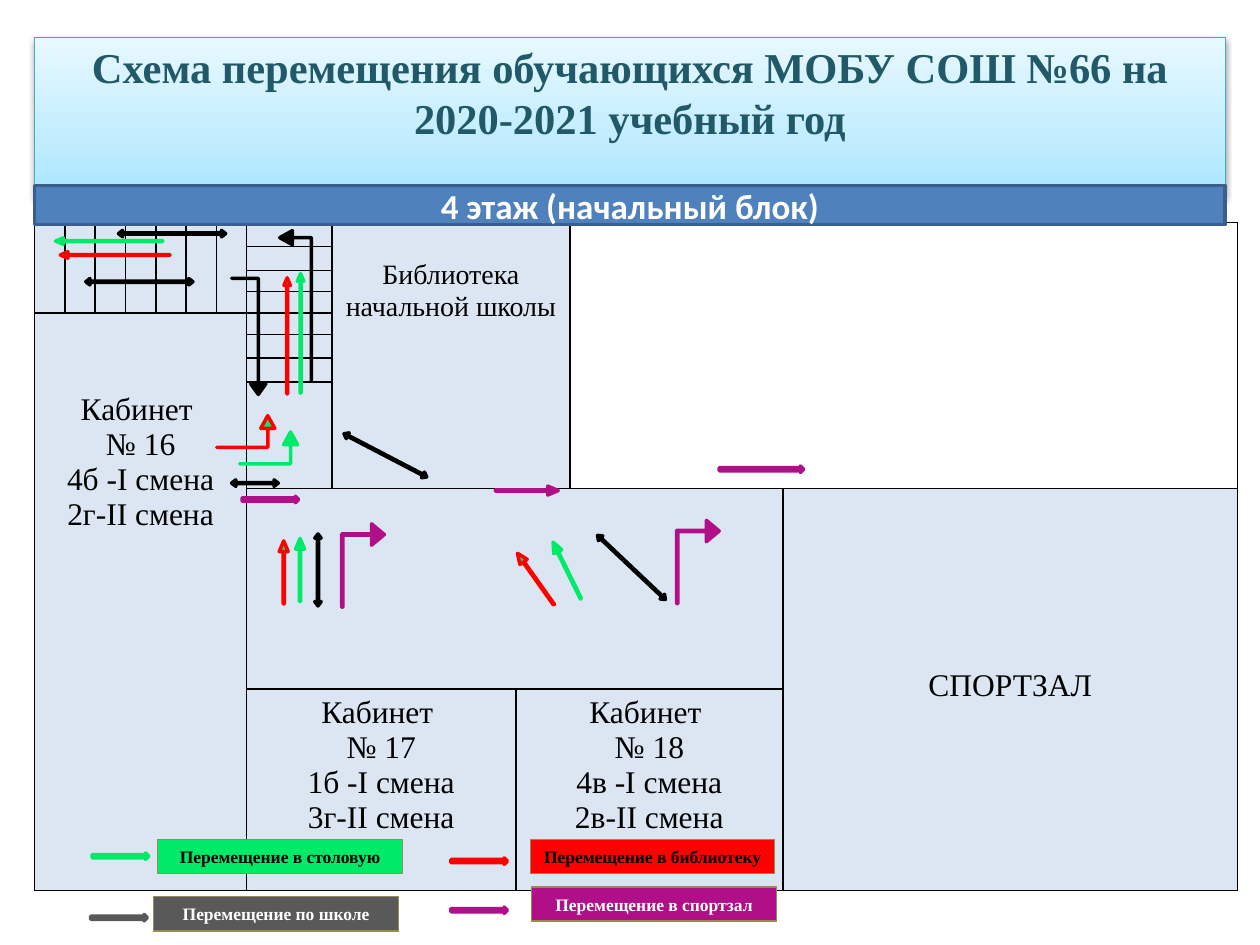
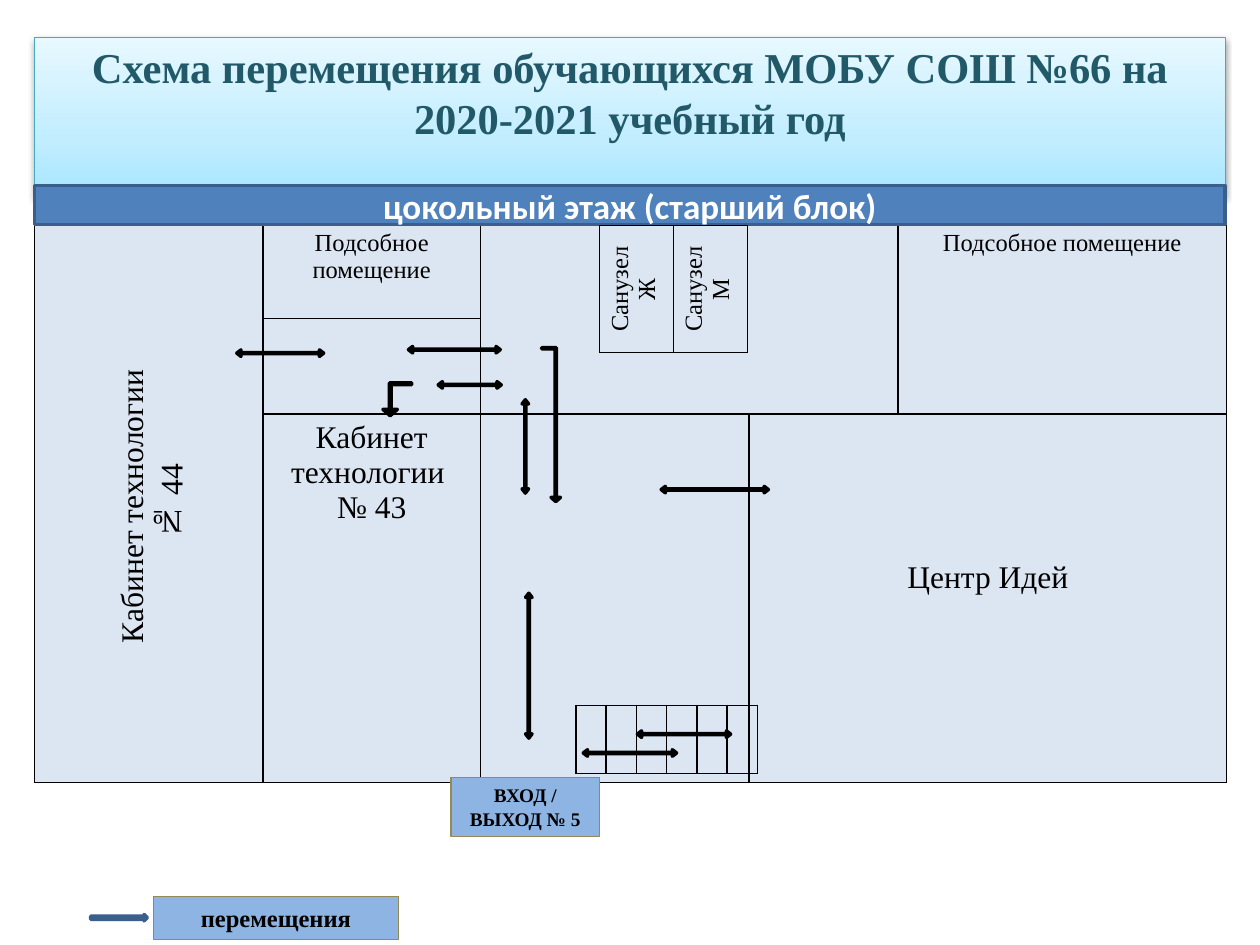
from copy import deepcopy
from dataclasses import dataclass

from lxml.etree import SubElement
from pptx import Presentation
from pptx.dml.color import RGBColor
from pptx.enum.shapes import MSO_SHAPE as Preset
from pptx.enum.text import MSO_ANCHOR as Anchor, PP_ALIGN as Align
from pptx.oxml import parse_xml
from pptx.oxml.ns import nsdecls, qn
from pptx.util import Cm, Pt

SCHOOL, CANTEEN, LIBRARY, GYM = "000000", "00EA6A", "FF0000", "B10F87"
BLACK, WHITE, GREY = "000000", "FFFFFF", "595959"
ROOM, BAND, BAND_EDGE = "DCE6F2", "4F81BD", "3A5F8C"
LABEL, LABEL_EDGE = "8EB4E3", "948A54"
TITLE_TEXT, TITLE_EDGE = "215968", "46AAC5"
TITLE_STOPS = [(0, "A7E6FF"), (0.35, "C1EDFF"), (1, "E7F8FF")]
SERIF, SANS = "Times New Roman", "Calibri"
TITLE = "Схема перемещения обучающихся МОБУ СОШ №66 на 2020-2021 учебный год"

LEFT, WIDTH, PLAN_TOP = 0.7, 24.0, 4.49
STEP = 0.61
BOTH_WAYS = (0.18, 0.65)
ONE_WAY = (0.14, 1.18)
PLAIN_HEAD = (0.5, 0.5)
THIN_BEND = (0, 0.22, 0.4)
STAIR_BEND = (0, 0.22, 0.31)
GYM_BEND = (0.03, 0.25, 0.3)
BASEMENT_BEND = (0.06, 0.25, 0.22)


@dataclass
class Room:
    """A block of table cells, with its caption lines."""
    row: int
    col: int
    rows: int = 1
    cols: int = 1
    lines: tuple = ()
    size: float = 18
    top: float = 0.13
    upright: bool = False
    fill: str = ROOM


def rgb(value):
    return RGBColor.from_string(value)


def apply(target, values):
    for name, value in values.items():
        setattr(target, name, value)


def write(frame, lines, size, color, bold=False, font=SERIF):
    for index, line in enumerate(lines):
        paragraph = frame.paragraphs[0] if index == 0 else frame.add_paragraph()
        paragraph.alignment = Align.CENTER
        run = paragraph.add_run()
        run.text = line
        apply(run.font, {"name": font, "size": Pt(size), "bold": bold})
        run.font.color.rgb = rgb(color)


def add_preset(slide, preset, box, fill, edge, edge_width):
    shape = slide.shapes.add_shape(preset, *map(Cm, box))
    shape.shadow.inherit = False
    shape.fill.solid()
    shape.fill.fore_color.rgb = rgb(fill)
    shape.line.color.rgb = rgb(edge)
    shape.line.width = Pt(edge_width)
    return shape


def add_label(slide, box, text, size, fill, color=BLACK, edge=LABEL_EDGE,
              edge_width=0.75, font=SERIF, anchor=Anchor.MIDDLE):
    label = add_preset(slide, Preset.RECTANGLE, box, fill, edge, edge_width)
    apply(label.text_frame, {
        "word_wrap": True, "vertical_anchor": anchor,
        "margin_top": Cm(0.07), "margin_bottom": Cm(0.07)})
    write(label.text_frame, [text], size, color, True, font)
    return label


def add_title(slide):
    title = add_label(slide, (LEFT, 0.76, WIDTH, 3.18), TITLE, 24.3, WHITE,
                      TITLE_TEXT, TITLE_EDGE, anchor=Anchor.TOP)
    title.fill.gradient()
    title.fill.gradient_angle = 90
    stops = title._element.spPr.find(".//" + qn("a:gsLst"))
    stops.append(deepcopy(stops[0]))
    for stop, (position, color) in zip(title.fill.gradient_stops, TITLE_STOPS):
        stop.position = position
        stop.color.rgb = rgb(color)
    effects = title._element.spPr.find(qn("a:effectLst"))
    shadow = SubElement(effects, qn("a:outerShdw"), blurRad="40000",
                        dist="20000", dir="5400000", rotWithShape="0")
    tint = SubElement(shadow, qn("a:srgbClr"), val=BLACK)
    SubElement(tint, qn("a:alpha"), val="38000")


def add_floor_band(slide, text):
    add_label(slide, (LEFT, 3.74, WIDTH, 0.79), text, 20, BAND, WHITE,
              BAND_EDGE, 2, SANS)


def format_cell(cell, fill):
    """Empty cell with a black outline that lets its row stay low."""
    apply(cell, {"margin_top": 0, "margin_bottom": 0,
                 "margin_left": 0, "margin_right": 0})
    if fill:
        cell.fill.solid()
        cell.fill.fore_color.rgb = rgb(fill)
    else:
        cell.fill.background()
    properties = cell._tc.get_or_add_tcPr()
    for index, side in enumerate("LRTB"):
        properties.insert(index, parse_xml(
            f'<a:ln{side} {nsdecls("a")} w="12700"><a:solidFill>'
            f'<a:srgbClr val="{BLACK}"/></a:solidFill></a:ln{side}>'))
    cell.text_frame.paragraphs[0]._p.get_or_add_endParaRPr().set("sz", "100")


def add_plan(slide, left, top, widths, heights, rooms=(), fill=None):
    table = slide.shapes.add_table(
        len(heights), len(widths), Cm(left), Cm(top),
        Cm(sum(widths)), Cm(sum(heights))).table
    apply(table, {"first_row": False, "horz_banding": False})
    for column, width in zip(table.columns, widths):
        column.width = Cm(width)
    for row, height in zip(table.rows, heights):
        row.height = Cm(height)
    for cell in table.iter_cells():
        format_cell(cell, fill)
    for room in rooms:
        add_room(table, room)


def add_room(table, room):
    cell = table.cell(room.row, room.col)
    if room.rows * room.cols > 1:
        cell.merge(table.cell(room.row + room.rows - 1,
                              room.col + room.cols - 1))
    if room.fill:
        cell.fill.solid()
        cell.fill.fore_color.rgb = rgb(room.fill)
    if room.lines:
        apply(cell, {"margin_top": Cm(room.top), "margin_bottom": Cm(0.13),
                     "margin_left": Cm(0.25), "margin_right": Cm(0.25)})
        write(cell.text_frame, room.lines, room.size, BLACK)
    if room.upright:
        cell._tc.get_or_add_tcPr().set("vert", "vert270")


def add_arrow(slide, preset, box, color, fill, turn, proportions):
    arrow = add_preset(slide, preset, box, fill or color, color, 2)
    arrow.rotation = turn
    for index, value in enumerate(proportions):
        arrow.adjustments[index] = value
    return arrow


def add_straight(slide, x, y, length, color=SCHOOL, turn=0, thickness=0.13,
                 preset=Preset.RIGHT_ARROW, proportions=ONE_WAY, fill=None):
    """Straight arrow centred on (x, y) and turned about that point."""
    box = (x - length / 2, y - thickness / 2, length, thickness)
    add_arrow(slide, preset, box, color, fill, turn, proportions)


def add_two_way(slide, x, y, length, turn=0):
    add_straight(slide, x, y, length, turn=turn,
                 preset=Preset.LEFT_RIGHT_ARROW, proportions=BOTH_WAYS)


def add_bend(slide, box, proportions, color=SCHOOL, turn=0, flip=False,
             fill=None):
    bend = add_arrow(slide, Preset.BENT_UP_ARROW, box, color, fill, turn,
                     proportions)
    if flip:
        bend._element.spPr.xfrm.set("flipH", "1")


def add_key_arrow(slide, x, y, color, length=1.14, fill=None):
    add_straight(slide, x, y, length, color, proportions=PLAIN_HEAD, fill=fill)


def start_slide(deck):
    slide = deck.slides.add_slide(deck.slide_layouts[6])
    add_title(slide)
    return slide


def build_fourth_floor(deck):
    slide = start_slide(deck)
    stairs = [Room(0, col, rows=4) for col in range(7)]
    rooms = stairs + [
        Room(0, 8, 8, 2, ("Библиотека", "начальной школы"), 16, top=0.75),
        Room(0, 10, 8, 2, fill=WHITE),
        Room(4, 0, 6, 7, ("Кабинет ", "№ 16", "4б -I смена", "2г-II смена"),
             top=1.6),
        Room(8, 7, 1, 4),
        Room(8, 11, 2, 1, ("СПОРТЗАЛ",), top=3.62),
        Room(9, 7, 1, 2, ("Кабинет ", "№ 17", "1б -I смена", "3г-II смена")),
        Room(9, 9, 1, 2, ("Кабинет ", "№ 18", "4в -I смена", "2в-II смена")),
    ]
    add_plan(slide, LEFT, PLAN_TOP, [STEP] * 7 + [1.72, 3.71, 1.09, 4.29, 9.17],
             [0.48] * 2 + [0.43] * 3 + [0.48] * 2 + [2.15, 4.04, 4.06],
             rooms, ROOM)
    add_floor_band(slide, "4 этаж (начальный блок)")

    for x, y, text, fill, color in [
            (3.1, 18.08, "Перемещение по школе", GREY, WHITE),
            (3.18, 16.92, "Перемещение в столовую", CANTEEN, BLACK),
            (10.69, 16.92, "Перемещение в библиотеку", LIBRARY, BLACK),
            (10.72, 17.88, "Перемещение в спортзал", GYM, WHITE)]:
        add_label(slide, (x, y, 4.93, 0.69), text, 10, fill, color)
    for x, y, color in [(2.4, 18.5, GREY), (2.43, 17.26, CANTEEN),
                        (9.66, 17.36, LIBRARY), (9.66, 18.35, GYM)]:
        add_key_arrow(slide, x, y, color)

    for route in [(12.73, 11.44, 1.88, 43.4), (5.14, 9.74, 0.94),
                  (6.41, 11.49, 1.45, 90), (3.47, 4.71, 2.16),
                  (2.81, 5.68, 2.16), (7.77, 9.18, 1.88, 27.5)]:
        add_two_way(slide, *route)
    for route in [(2.2, 4.86, 2.16, CANTEEN, 180),
                  (6.06, 6.72, 2.41, CANTEEN, 270),
                  (11.43, 11.5, 1.27, CANTEEN, 243.8, 0.18),
                  (6.05, 11.49, 1.27, CANTEEN, 270, 0.18),
                  (2.32, 5.14, 2.21, LIBRARY, 180),
                  (5.79, 6.77, 2.34, LIBRARY, 270),
                  (5.72, 11.54, 1.27, LIBRARY, 270, 0.18),
                  (10.8, 11.67, 1.27, LIBRARY, 234.6, 0.18),
                  (10.62, 9.89, 1.27, GYM, 0, 0.18)]:
        add_straight(slide, *route, fill=GYM if GYM in route else CANTEEN)
    add_key_arrow(slide, 15.35, 9.46, GYM, 1.7)
    add_key_arrow(slide, 5.45, 10.07, GYM)

    add_bend(slide, (4.67, 5.61, 0.69, 2.34), STAIR_BEND, turn=180, flip=True)
    add_bend(slide, (4.45, 5.84, 3.02, 0.64), THIN_BEND, turn=270)
    add_bend(slide, (4.83, 8.71, 1.17, 0.64), THIN_BEND, CANTEEN)
    add_bend(slide, (4.37, 8.38, 1.17, 0.64), THIN_BEND, LIBRARY, fill=CANTEEN)
    for x, y in [(6.48, 10.97), (13.23, 10.9)]:
        add_bend(slide, (x, y, 1.68, 0.86), GYM_BEND, GYM, 90, True)


def build_basement(deck):
    slide = start_slide(deck)
    add_plan(slide, LEFT, PLAN_TOP, [4.6, 4.39, 5.41, 3.0, 6.63],
             [1.93, 1.93, 7.39], [
        Room(0, 0, 3, 1, ("Кабинет технологии ", "№ 44"), top=1.62,
             upright=True),
        Room(0, 1, lines=("Подсобное помещение",), size=14),
        Room(0, 2, 2, 2),
        Room(0, 4, 2, 1, ("Подсобное помещение",), 14),
        Room(2, 1, lines=("Кабинет технологии ", "№ 43")),
        Room(2, 3, 1, 2, ("Центр Идей",), top=2.94),
    ], ROOM)
    add_floor_band(slide, "цокольный этаж (старший блок)")
    add_plan(slide, 11.61, 14.22, [STEP] * 6, [1.37])
    add_plan(slide, 12.09, 4.55, [1.49] * 2, [2.41], [
        Room(0, col, lines=(f"Санузел {who}",), size=14, upright=True, fill="")
        for col, who in enumerate("ЖМ")])

    for route in [(5.65, 7.12, 1.75), (10.66, 13.42, 2.92, 90),
                  (12.7, 15.18, 1.88), (10.59, 9, 1.88, 90),
                  (9.16, 7.05, 1.85), (13.79, 14.8, 1.88),
                  (9.47, 7.76, 1.27), (14.41, 9.87, 2.16)]:
        add_two_way(slide, *route)
    add_bend(slide, (10.92, 7.01, 0.38, 3.1), BASEMENT_BEND, turn=180, flip=True)
    add_bend(slide, (7.72, 7.72, 0.58, 0.66), BASEMENT_BEND, turn=180)

    add_label(slide, (9.09, 15.67, 3.0, 1.19), "ВХОД / ВЫХОД № 5", 11, LABEL)
    add_label(slide, (3.1, 18.08, 4.93, 0.86), "перемещения", 14, LABEL)
    add_key_arrow(slide, 2.4, 18.5, BAND_EDGE, fill=BAND)


def main():
    deck = Presentation()
    apply(deck, {"slide_width": Cm(25.4), "slide_height": Cm(19.05)})
    build_fourth_floor(deck)
    build_basement(deck)
    deck.save("out.pptx")


if __name__ == "__main__":
    main()
